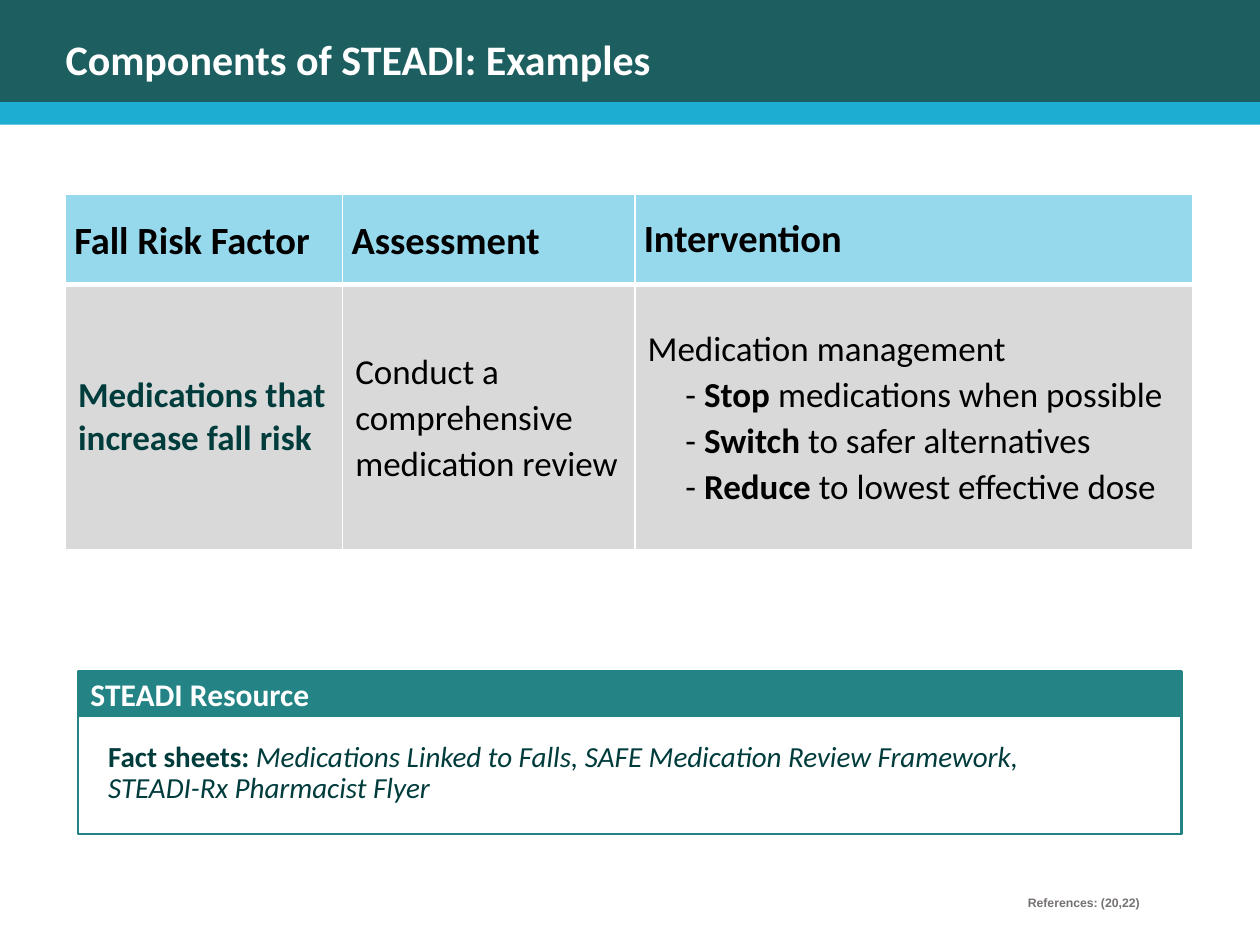
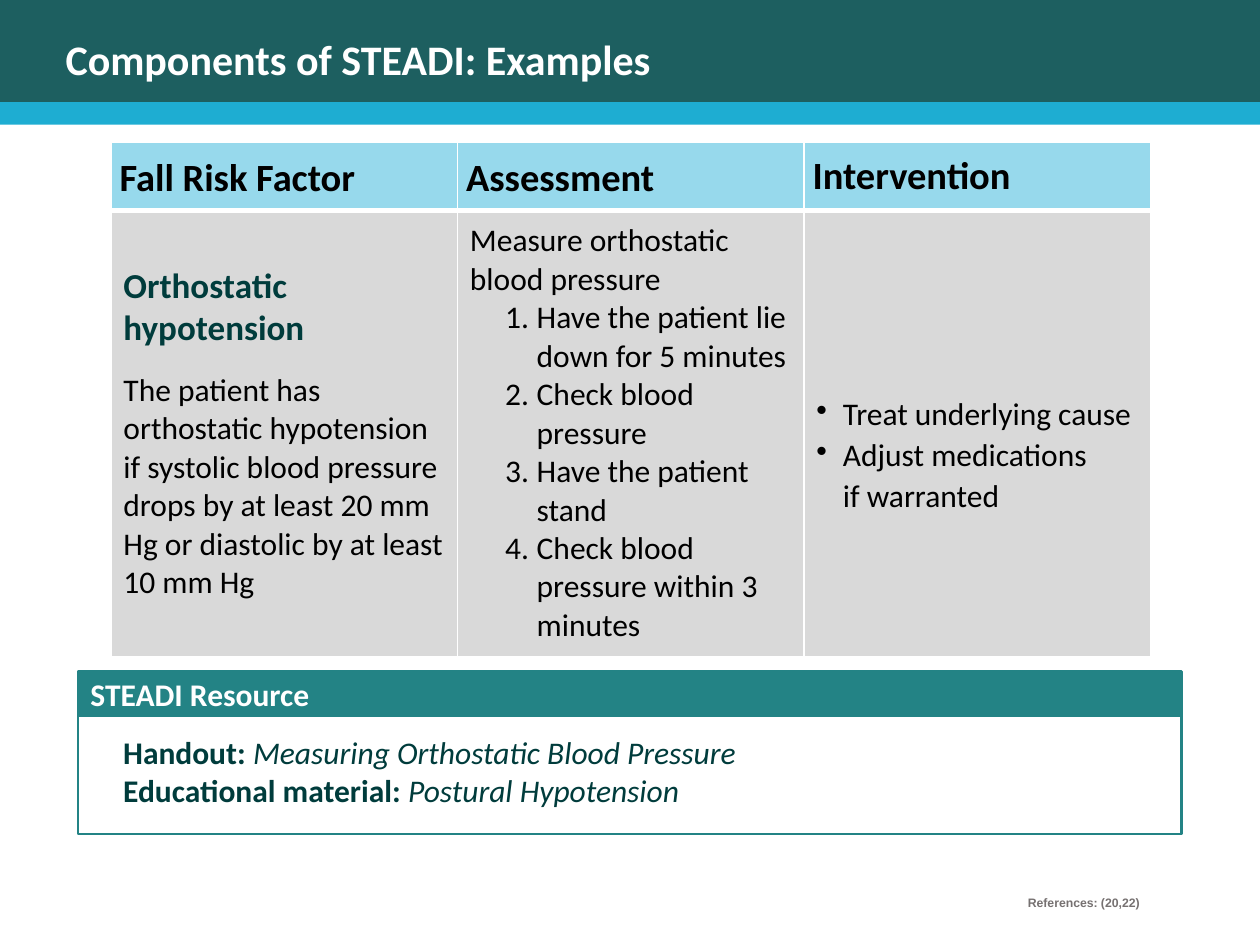
from dataclasses import dataclass

from pptx import Presentation
from pptx.dml.color import RGBColor
from pptx.enum.shapes import MSO_SHAPE
from pptx.enum.text import MSO_ANCHOR, MSO_AUTO_SIZE, PP_ALIGN
from pptx.oxml.ns import qn
from pptx.util import Inches, Pt
from lxml import etree

RECTANGLE = MSO_SHAPE.RECTANGLE
MIDDLE = MSO_ANCHOR.MIDDLE
LEFT = PP_ALIGN.LEFT
NO_AUTOFIT = MSO_AUTO_SIZE.NONE
TITLE_ONLY = 5


class Theme:
    font, reference_font = "Calibri", "Arial"
    band, stripe, panel = "1D5F60", "1EADD2", "238385"
    header_fill, body_fill = "97D9EC", "D9D9D9"
    white, black, dark_teal, gray = "FFFFFF", "000000", "003C3C", "767171"
    title, header, large, body, fact, reference = 24, 22, 20, 18, 16.6, 7


@dataclass
class Para:
    pieces: list  # (text, style) pairs; style holds "b" for bold, "i" for italic
    size: float = Theme.body
    color: str = Theme.black
    font: str = Theme.font
    spacing: float = 1.0
    after: float = 0
    level: int = 0
    left: float = 0
    hanging: float = 0
    bullet: tuple = ()  # element name, attribute name, attribute value


def write(frame, paras):
    """Fill a text frame with formatted paragraphs."""
    frame.word_wrap = True
    for index, para in enumerate(paras):
        paragraph = frame.add_paragraph() if index else frame.paragraphs[0]
        paragraph.alignment = LEFT
        paragraph.level = para.level
        paragraph.line_spacing = para.spacing
        paragraph.space_before = Pt(0)
        paragraph.space_after = Pt(para.after)
        properties = paragraph._p.get_or_add_pPr()
        properties.set("marL", str(Inches(para.left)))
        properties.set("indent", str(-Inches(para.hanging)))
        if para.bullet:
            tag, attribute, value = para.bullet
            etree.SubElement(properties, qn(tag)).set(attribute, value)
        for text, style in para.pieces:
            for number, line in enumerate(text.split("\v")):
                if number:
                    paragraph.add_line_break()
                span = paragraph.add_run()
                span.text = line
                span.font.name = para.font
                span.font.size = Pt(para.size)
                span.font.bold = "b" in style
                span.font.italic = "i" in style
                span.font.color.rgb = RGBColor.from_string(para.color)


# Table and resource text
DASHED = dict(size=Theme.large, spacing=1.07, left=0.3)
STEP = dict(level=1, left=0.53, hanging=0.25, bullet=("a:buAutoNum", "type", "arabicPeriod"))
DOT = dict(spacing=1.07, left=0.21, hanging=0.21, bullet=("a:buChar", "char", "•"))
HEADERS = [("Fall Risk Factor", 1.07), ("Assessment", 1.07), ("Intervention", 1.0)]
STEPS = ["Have the patient lie down for 5 minutes", "Check blood pressure",
         "Have the patient stand", "Check blood pressure within 3 minutes"]
ACTIONS = [("Stop", " medications when possible"), ("Switch", " to safer alternatives"),
           ("Reduce", " to lowest effective dose")]

PAGES = [
    dict(
        table_at=(0.52, 1.54), columns=[2.2, 2.32, 4.43], rows=[0.72, 2.1],
        top_margins=[0, 0, 0],
        cells=[
            [Para([("Medications that increase fall risk", "b")], Theme.large, Theme.dark_teal)],
            [Para([("Conduct a comprehensive medication review", "")], Theme.large, spacing=1.07)],
            [Para([("Medication management", "")], Theme.large, spacing=1.07)]
            + [Para([("- ", ""), (verb, "b"), (rest, "")], **DASHED) for verb, rest in ACTIONS],
        ],
        resource_at=(0.76, 5.84, 8.15, 0.66),
        resource=[Para([("Fact sheets: ", "b"),
                        ("Medications Linked to Falls, SAFE Medication Review Framework, "
                         "STEADI-Rx Pharmacist Flyer", "i")],
                       Theme.fact, Theme.dark_teal, spacing=0.9)],
    ),
    dict(
        table_at=(0.88, 1.13), columns=[2.75] * 3, rows=[0.54, 3.54],
        top_margins=[0, 0, 0.33],
        cells=[
            [Para([("Orthostatic hypotension", "b")], Theme.large, Theme.dark_teal, after=12),
             Para([("The patient has orthostatic hypotension if systolic blood pressure "
                    "drops by at least 20 mm Hg or diastolic by at least 10 mm Hg", "")])],
            [Para([("Measure orthostatic blood pressure", "")])]
            + [Para([(step, "")], **STEP) for step in STEPS],
            [Para([(action, "")], **DOT) for action in
             ("Treat underlying cause", "Adjust medications\vif warranted")],
        ],
        resource_at=(0.88, 5.77, 8.76, 0.82),
        resource=[Para([(kind, "b"), (name, "i")], color=Theme.dark_teal) for kind, name in
                  (("Handout: ", "Measuring Orthostatic Blood Pressure"),
                   ("Educational material: ", "Postural Hypotension"))],
    ),
]

deck = Presentation()
deck.slide_width, deck.slide_height = Inches(10), Inches(7.5)
layout = deck.slide_layouts[TITLE_ONLY]
for placeholder in list(layout.placeholders):
    if placeholder.placeholder_format.idx != 0:
        layout.shapes.element.remove(placeholder.element)
pages = [deck.slides.add_slide(layout) for _ in PAGES]

# Shared bands and resource panel, moved to the layout behind its title
SHARED_SHAPES = [
    ((0, 0.15, 10, 0.84), Theme.stripe, None),
    ((0, -0.03, 10, 0.84), Theme.band, None),
    ((0.62, 5.68, 8.76, 0.94), None, Theme.panel),
    ((0.62, 5.33, 8.76, 0.35), Theme.panel, Theme.panel),
]
shared = []
for place, fill, line in SHARED_SHAPES:
    shape = pages[0].shapes.add_shape(RECTANGLE, *map(Inches, place))
    shape.shadow.inherit = False
    if fill:
        shape.fill.solid()
        shape.fill.fore_color.rgb = RGBColor.from_string(fill)
    else:
        shape.fill.background()
    if line:
        shape.line.color.rgb = RGBColor.from_string(line)
        shape.line.width = Pt(1.5)
    else:
        shape.line.fill.background()
    shared.append(shape)
for position, shape in enumerate(shared, start=2):
    layout.shapes.element.insert(position, shape.element)

for page, content in zip(pages, PAGES):
    # Title
    title = page.shapes.title
    title.left, title.top, title.width, title.height = map(Inches, (0.42, 0.2, 8.62, 0.59))
    title.text_frame.auto_size = NO_AUTOFIT
    title.text_frame.vertical_anchor = MIDDLE
    write(title.text_frame, [Para([("Components of STEADI: Examples", "b")],
                                  Theme.title, Theme.white, spacing=0.9)])

    # Risk factor table
    columns, rows = content["columns"], content["rows"]
    size = (sum(columns), sum(rows))
    table = page.shapes.add_table(len(rows), len(columns),
                                  *map(Inches, content["table_at"] + size)).table
    table.horz_banding = False
    for column, width in zip(table.columns, columns):
        column.width = Inches(width)
    for row, height in zip(table.rows, rows):
        row.height = Inches(height)
    header_cells = [[Para([(text, "b")], Theme.header, spacing=spacing)]
                    for text, spacing in HEADERS]
    for row_index, row_cells in enumerate((header_cells, content["cells"])):
        for column_index, paras in enumerate(row_cells):
            cell = table.cell(row_index, column_index)
            cell.vertical_anchor = MIDDLE
            cell.margin_left = Inches(0.1 if row_index else 0.07)
            cell.margin_right = Inches(0.07)
            cell.margin_top = Inches(content["top_margins"][column_index] if row_index else 0)
            cell.margin_bottom = 0
            # White borders, heavier between header and body
            heavy_side = "a:lnT" if row_index else "a:lnB"
            for side in ("a:lnL", "a:lnR", "a:lnT", "a:lnB"):
                border = etree.SubElement(cell._tc.get_or_add_tcPr(), qn(side))
                border.set("w", str(Pt(3 if side == heavy_side else 1)))
                paint = etree.SubElement(border, qn("a:solidFill"))
                etree.SubElement(paint, qn("a:srgbClr")).set("val", Theme.white)
            cell.fill.solid()
            cell.fill.fore_color.rgb = RGBColor.from_string(
                Theme.body_fill if row_index else Theme.header_fill)
            write(cell.text_frame, paras)

    # Resource panel text and references
    for place, paras in (
        ((0.62, 5.34, 6.57, 0.4),
         [Para([("STEADI Resource", "b")], color=Theme.white, spacing=0.9)]),
        (content["resource_at"], content["resource"]),
        ((8.06, 7.07, 1.83, 0.38),
         [Para([("References: (20,22)", "b")], Theme.reference, Theme.gray,
               Theme.reference_font, spacing=0.9)]),
    ):
        box = page.shapes.add_textbox(*map(Inches, place))
        write(box.text_frame, paras)

deck.save("out.pptx")
